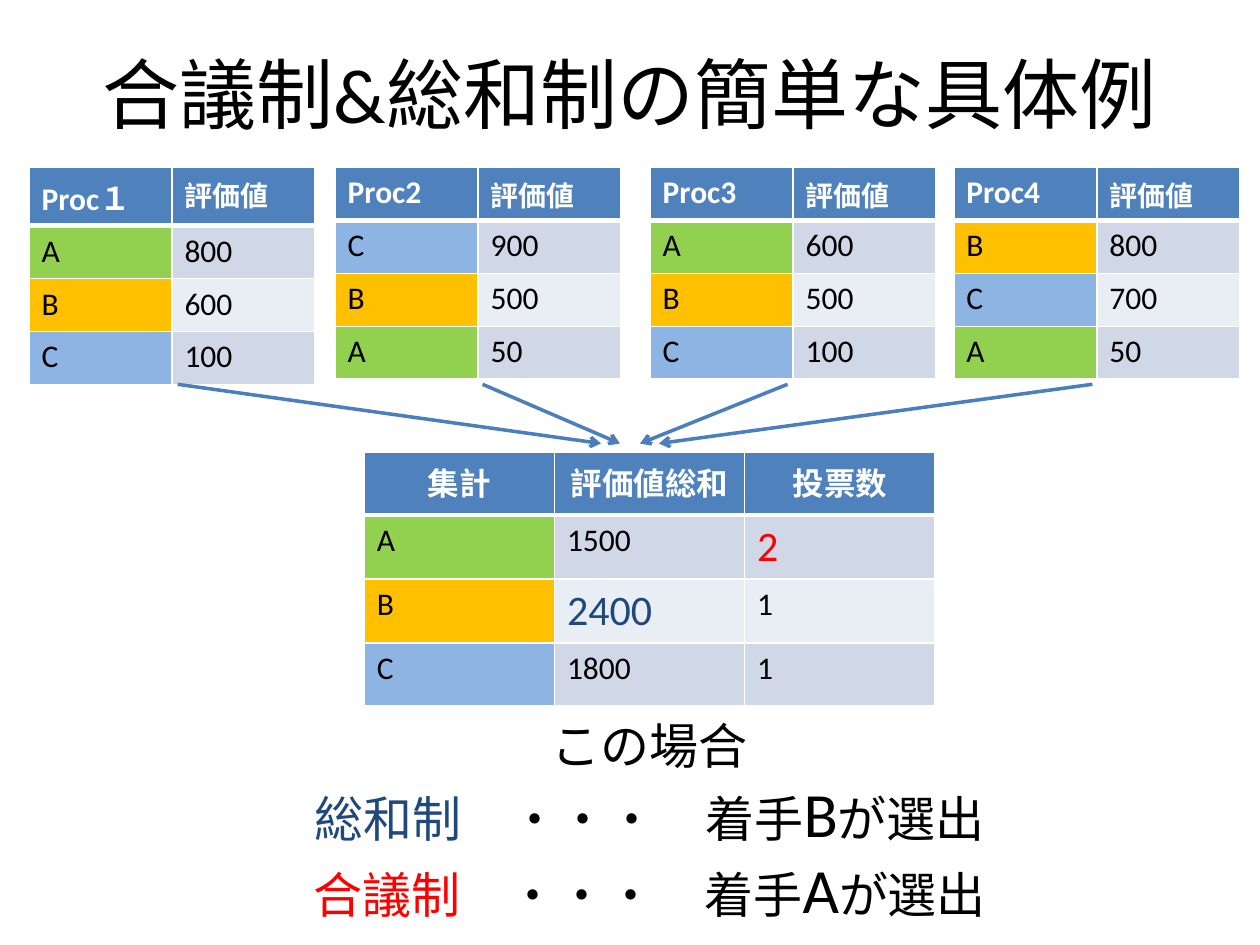
import pptx
import pptx.chart.data
import pptx.dml.color
import pptx.enum.shapes
import pptx.enum.text
import pptx.oxml
import pptx.oxml.ns
import pptx.util
from pptx.util import Inches

FONT = "Calibri"
BLACK, WHITE, RED, NAVY = "000000", "FFFFFF", "FF0000", "1F497D"
HEADER_FILL = "4F81BD"
BAND_FILLS = ("D0D8E8", "E9EDF4")
MOVE_FILLS = {"A": "92D050", "B": "FFC000", "C": "8EB4E3"}
ARROW_COLOR = "4B7EBC"
CENTER = pptx.enum.text.PP_ALIGN.CENTER

PROCESS_TABLES = [
    (0.23, "Proc１", [("A", "800"), ("B", "600"), ("C", "100")]),
    (2.66, "Proc2", [("C", "900"), ("B", "500"), ("A", "50")]),
    (5.16, "Proc3", [("A", "600"), ("B", "500"), ("C", "100")]),
    (7.57, "Proc4", [("B", "800"), ("C", "700"), ("A", "50")]),
]
SUMMARY_ROWS = [
    ("集計", "評価値総和", "投票数"),
    ("A", "1500", "2"),
    ("B", "2400", "1"),
    ("C", "1800", "1"),
]
ARROWS = [(1.41, 4.77), (3.83, 4.92), (6.25, 5.08), (8.67, 5.23)]
CONCLUSIONS = [("総和制", NAVY, "B"), ("合議制", RED, "A")]


def rgb(color):
    return pptx.dml.color.RGBColor.from_string(color)


def format_run(run, size, color=BLACK, bold=False):
    run.font.name = FONT
    run.font.size = pptx.util.Pt(size)
    run.font.bold = bold
    run.font.color.rgb = rgb(color)


def add_run(paragraph, text, size, color=BLACK):
    run = paragraph.add_run()
    run.text = text
    format_run(run, size, color)


def set_borders(cell, top, bottom):
    properties = cell._tc.get_or_add_tcPr()
    for index, (side, width) in enumerate(
        [("L", 1), ("R", 1), ("T", top), ("B", bottom)]
    ):
        border = pptx.oxml.parse_xml(
            f'<a:ln{side} {pptx.oxml.ns.nsdecls("a")} w="{pptx.util.Pt(width)}">'
            f'<a:solidFill><a:srgbClr val="{WHITE}"/></a:solidFill></a:ln{side}>'
        )
        properties.insert(index, border)


def cell_fill(row, column, text):
    if row == 0:
        return HEADER_FILL
    if column == 0:
        return MOVE_FILLS[text]
    return BAND_FILLS[(row - 1) % 2]


def add_score_table(slide, left, top, width, height, rows, special, alignment=None):
    shape = slide.shapes.add_table(
        len(rows), len(rows[0]),
        Inches(left), Inches(top), Inches(width), Inches(height),
    )
    for row, texts in enumerate(rows):
        for column, text in enumerate(texts):
            cell = shape.table.cell(row, column)
            cell.fill.solid()
            cell.fill.fore_color.rgb = rgb(cell_fill(row, column, text))
            set_borders(cell, 3 if row == 1 else 1, 3 if row == 0 else 1)
            cell.text_frame.text = text
            paragraph = cell.text_frame.paragraphs[0]
            default = (18, WHITE if row == 0 else BLACK)
            size, color = special.get((row, column), default)
            format_run(paragraph.runs[0], size, color, row == 0)
            if row == 0:
                paragraph.alignment = alignment


def add_arrow(slide, start, end):
    connector = slide.shapes.add_connector(
        pptx.enum.shapes.MSO_CONNECTOR.STRAIGHT,
        Inches(start), Inches(3.05), Inches(end), Inches(3.52),
    )
    connector.line.color.rgb = rgb(ARROW_COLOR)
    connector.line.width = pptx.util.Pt(2)
    namespace = pptx.oxml.ns.nsdecls("a")
    connector.line._get_or_add_ln().append(
        pptx.oxml.parse_xml(f'<a:tailEnd {namespace} type="arrow"/>')
    )
    connector._element.spPr.append(pptx.oxml.parse_xml(f"<a:effectLst {namespace}/>"))


def add_title(slide, text):
    title = slide.shapes.title
    title.left, title.top = Inches(0.5), Inches(0.3)
    title.width, title.height = Inches(9), Inches(0.87)
    title.text_frame.text = text
    title.text_frame.vertical_anchor = pptx.enum.text.MSO_ANCHOR.MIDDLE
    paragraph = title.text_frame.paragraphs[0]
    paragraph.alignment = CENTER
    format_run(paragraph.runs[0], 44)


def add_conclusion(slide):
    shape = slide.shapes.add_textbox(
        Inches(2.03), Inches(5.63), Inches(6.25), Inches(1.78)
    )
    text_frame = shape.text_frame
    text_frame.word_wrap = True
    text_frame.auto_size = pptx.enum.text.MSO_AUTO_SIZE.SHAPE_TO_FIT_TEXT
    add_run(text_frame.paragraphs[0], "この場合", 28)
    for system, color, move in CONCLUSIONS:
        paragraph = text_frame.add_paragraph()
        add_run(paragraph, system, 28, color)
        add_run(paragraph, "　・・・　着手", 28)
        add_run(paragraph, move, 36)
        add_run(paragraph, "が選出", 28)
    for paragraph in text_frame.paragraphs:
        paragraph.alignment = CENTER


def main():
    presentation = pptx.Presentation()
    presentation.slide_width, presentation.slide_height = Inches(10), Inches(7.5)
    slide = presentation.slides.add_slide(presentation.slide_layouts[5])
    add_title(slide, "合議制&総和制の簡単な具体例")
    for left, process, scores in PROCESS_TABLES:
        rows = [(process, "評価値")] + scores
        add_score_table(slide, left, 1.33, 2.27, 1.68, rows, {(0, 1): (16, WHITE)})
    winners = {(1, 2): (24, RED), (2, 1): (24, NAVY)}
    add_score_table(slide, 2.89, 3.59, 4.53, 1.99, SUMMARY_ROWS, winners, CENTER)
    add_conclusion(slide)
    for start, end in ARROWS:
        add_arrow(slide, start, end)
    presentation.save("out.pptx")


if __name__ == "__main__":
    main()
